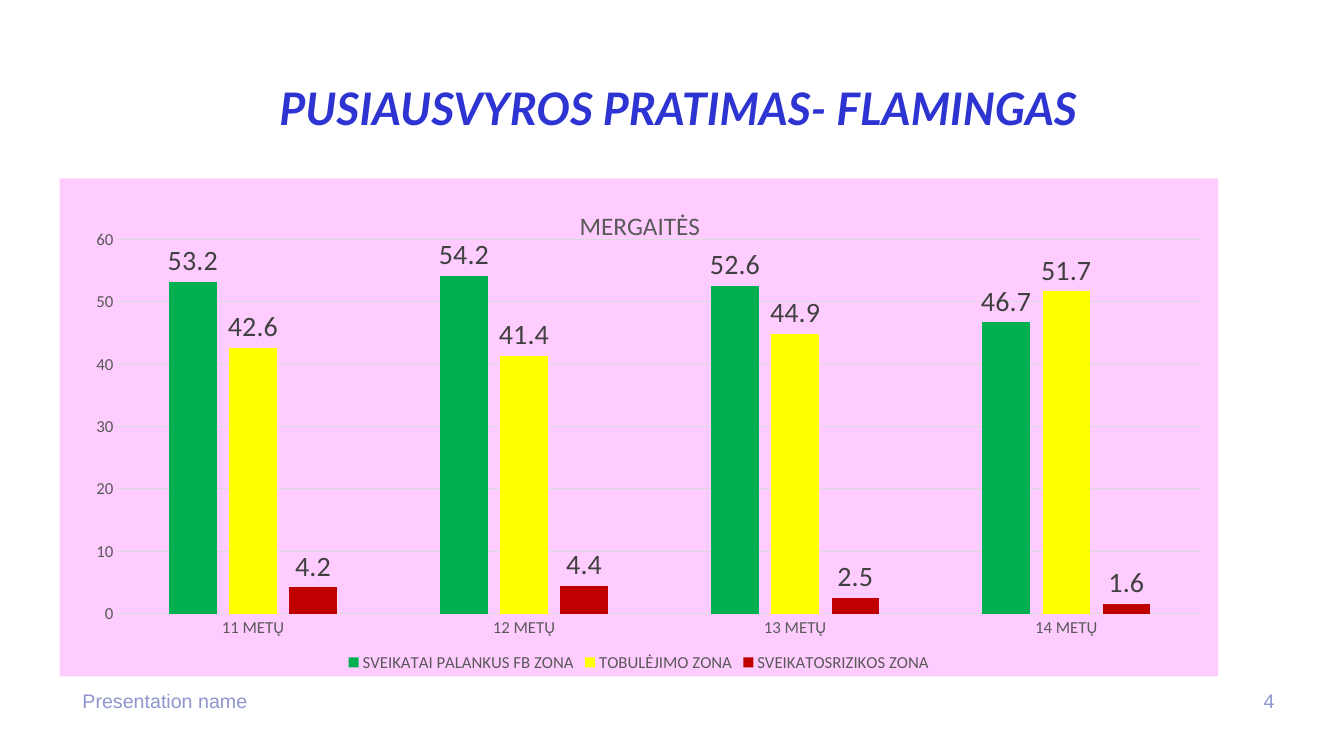
from dataclasses import dataclass

import lxml.etree
import pptx
import pptx.chart.data
import pptx.dml.color
import pptx.enum.chart
import pptx.enum.text
import pptx.oxml
import pptx.oxml.ns
import pptx.util

ALIGN = pptx.enum.text.PP_ALIGN
SLIDE_WIDTH = pptx.util.Inches(13.33)
SLIDE_HEIGHT = pptx.util.Inches(7.5)
AGES = ("11 METŲ", "12 METŲ", "13 METŲ", "14 METŲ")


@dataclass(frozen=True)
class Theme:
    heading_font: str = "Lato"
    footer_font: str = "Arial"
    chart_font: str = "Calibri"
    heading: str = "2E34D1"
    footer: str = "8E96CD"
    panel: str = "FFCCFF"
    axis_text: str = "595959"
    label_text: str = "404040"
    grid: str = "D9D9D9"
    heading_size: float = 32
    footer_size: float = 14
    chart_title_size: float = 18
    axis_size: float = 12
    label_size: float = 20
    line_width: float = 0.75


THEME = Theme()


@dataclass(frozen=True)
class Area:
    left: float
    top: float
    width: float
    height: float

    def on_slide(self) -> tuple[int, int, int, int]:
        return (
            round(self.left / 100 * SLIDE_WIDTH),
            round(self.top / 100 * SLIDE_HEIGHT),
            round(self.width / 100 * SLIDE_WIDTH),
            round(self.height / 100 * SLIDE_HEIGHT),
        )


@dataclass(frozen=True)
class Caption:
    text: str
    area: Area
    font: str
    size: float
    color: str
    align: ALIGN
    strong: bool = False
    spacing: float = 1.0


@dataclass(frozen=True)
class Zone:
    name: str
    values: tuple[float, ...]
    color: str


CAPTIONS = (
    Caption("PUSIAUSVYROS PRATIMAS- FLAMINGAS", Area(5.4, 10.8, 90.17, 18.4),
            THEME.heading_font, THEME.heading_size, THEME.heading, ALIGN.CENTER, True, 0.9),
    Caption("Presentation name", Area(5.4, 90.53, 47.26, 5.07),
            THEME.footer_font, THEME.footer_size, THEME.footer, ALIGN.LEFT),
    Caption("4", Area(91.67, 90.53, 3.9, 5.33),
            THEME.footer_font, THEME.footer_size, THEME.footer, ALIGN.RIGHT),
)
CHART_AREA = Area(4.43, 23.6, 86.2, 65.87)
ZONES = (
    Zone("SVEIKATAI PALANKUS FB ZONA", (53.2, 54.2, 52.6, 46.7), "00B050"),
    Zone("TOBULĖJIMO ZONA", (42.6, 41.4, 44.9, 51.7), "FFFF00"),
    Zone("SVEIKATOSRIZIKOS ZONA", (4.2, 4.4, 2.5, 1.6), "C00000"),
)


def rgb(color: str) -> pptx.dml.color.RGBColor:
    return pptx.dml.color.RGBColor.from_string(color)


def set_font(font, name: str, size: float, color: str) -> None:
    font.name = name
    font.size = pptx.util.Pt(size)
    font.color.rgb = rgb(color)


def set_line(line) -> None:
    line.color.rgb = rgb(THEME.grid)
    line.width = pptx.util.Pt(THEME.line_width)


def add_caption(page, caption: Caption) -> None:
    frame = page.shapes.add_textbox(*caption.area.on_slide()).text_frame
    frame.word_wrap = True
    para = frame.paragraphs[0]
    para.text = caption.text
    para.alignment = caption.align
    para.line_spacing = caption.spacing
    set_font(para.font, caption.font, caption.size, caption.color)
    para.font.bold = para.font.italic = caption.strong


def set_layout(parent, index: int, **shares: float | str) -> None:
    tag = pptx.oxml.ns.qn
    for old in parent.findall(tag("c:layout")):
        parent.remove(old)
    layout = lxml.etree.Element(tag("c:layout"))
    manual = lxml.etree.SubElement(layout, tag("c:manualLayout"))
    for name, value in shares.items():
        lxml.etree.SubElement(manual, tag(f"c:{name}")).set("val", str(value))
    parent.insert(index, layout)


def fill_chart(chart, color: str) -> None:
    panel = pptx.oxml.parse_xml(
        f'<c:spPr {pptx.oxml.ns.nsdecls("c", "a")}><a:solidFill><a:srgbClr val="{color}"/>'
        "</a:solidFill><a:ln><a:noFill/></a:ln></c:spPr>"
    )
    chart.element.xpath("c:chart")[0].addnext(panel)


def style_axes(chart) -> None:
    for axis in (chart.category_axis, chart.value_axis):
        axis.major_tick_mark = pptx.enum.chart.XL_TICK_MARK.NONE
        axis.minor_tick_mark = pptx.enum.chart.XL_TICK_MARK.NONE
        set_font(axis.tick_labels.font, THEME.chart_font, THEME.axis_size, THEME.axis_text)
    set_line(chart.category_axis.format.line)
    chart.value_axis.format.line.fill.background()
    chart.value_axis.minimum_scale = 0
    chart.value_axis.maximum_scale = 60
    chart.value_axis.major_unit = 10
    set_line(chart.value_axis.major_gridlines.format.line)


def add_zone_chart(page) -> None:
    data = pptx.chart.data.CategoryChartData()
    data.categories = AGES
    for zone in ZONES:
        data.add_series(zone.name, zone.values)
    chart = page.shapes.add_chart(
        pptx.enum.chart.XL_CHART_TYPE.COLUMN_CLUSTERED, *CHART_AREA.on_slide(), data
    ).chart
    set_font(chart.font, THEME.chart_font, THEME.axis_size, THEME.axis_text)
    fill_chart(chart, THEME.panel)

    chart.has_title = True
    para = chart.chart_title.text_frame.paragraphs[0]
    para.text = "MERGAITĖS"
    set_font(para.font, THEME.chart_font, THEME.chart_title_size, THEME.axis_text)
    para.font.bold = False
    set_layout(chart.element.xpath("c:chart/c:title")[0], 1,
               xMode="edge", yMode="edge", x=0.445, y=0.05)
    set_layout(chart.element.xpath("c:chart/c:plotArea")[0], 0,
               layoutTarget="inner", xMode="edge", yMode="edge",
               x=0.05, y=0.123, w=0.936, h=0.751)

    chart.has_legend = True
    chart.legend.position = pptx.enum.chart.XL_LEGEND_POSITION.BOTTOM
    chart.legend.include_in_layout = False
    set_font(chart.legend.font, THEME.chart_font, THEME.axis_size, THEME.axis_text)
    style_axes(chart)

    plot = chart.plots[0]
    plot.gap_width = 219
    plot.overlap = -27
    plot.vary_by_categories = False
    for zone, series in zip(ZONES, plot.series):
        series.format.fill.solid()
        series.format.fill.fore_color.rgb = rgb(zone.color)
        labels = series.data_labels
        labels.show_value = True
        labels.position = pptx.enum.chart.XL_LABEL_POSITION.OUTSIDE_END
        set_font(labels.font, THEME.chart_font, THEME.label_size, THEME.label_text)


def main() -> None:
    deck = pptx.Presentation()
    deck.slide_width = SLIDE_WIDTH
    deck.slide_height = SLIDE_HEIGHT
    page = deck.slides.add_slide(deck.slide_layouts[6])
    for caption in CAPTIONS:
        add_caption(page, caption)
    add_zone_chart(page)
    deck.save("out.pptx")


if __name__ == "__main__":
    main()
